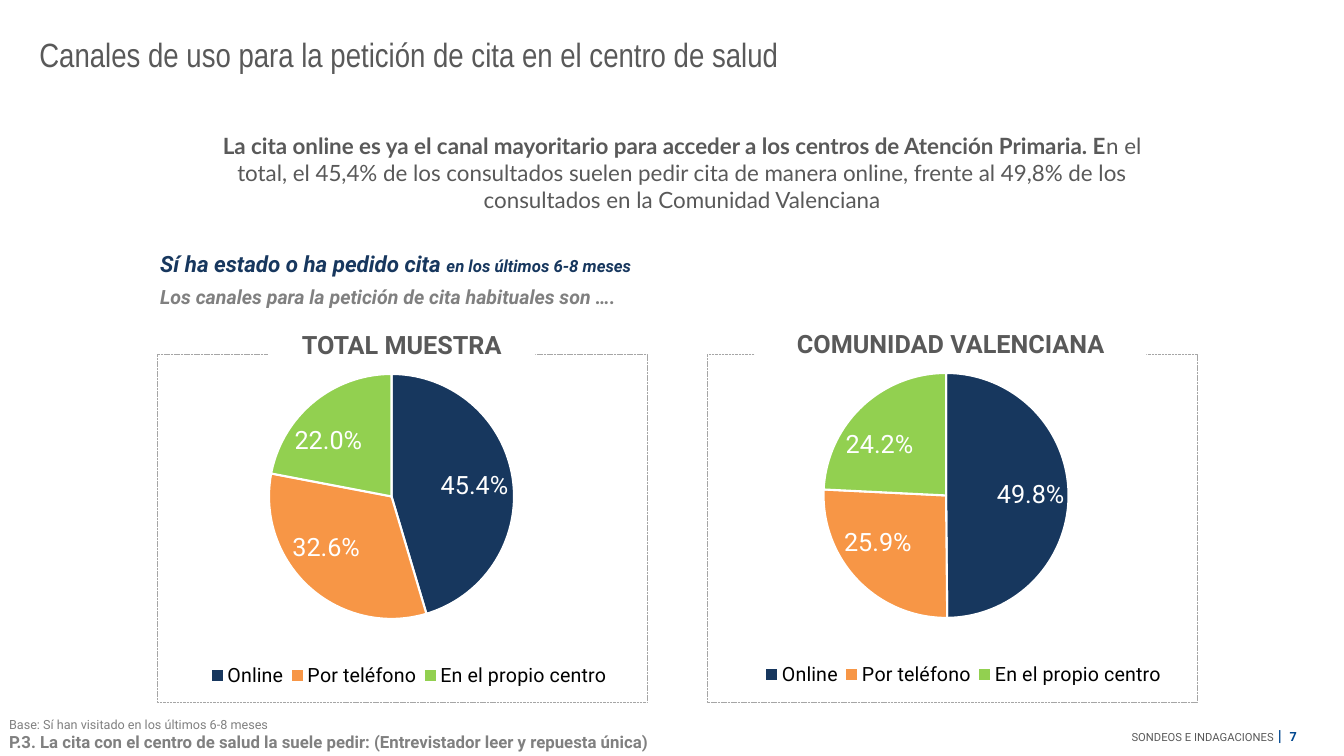
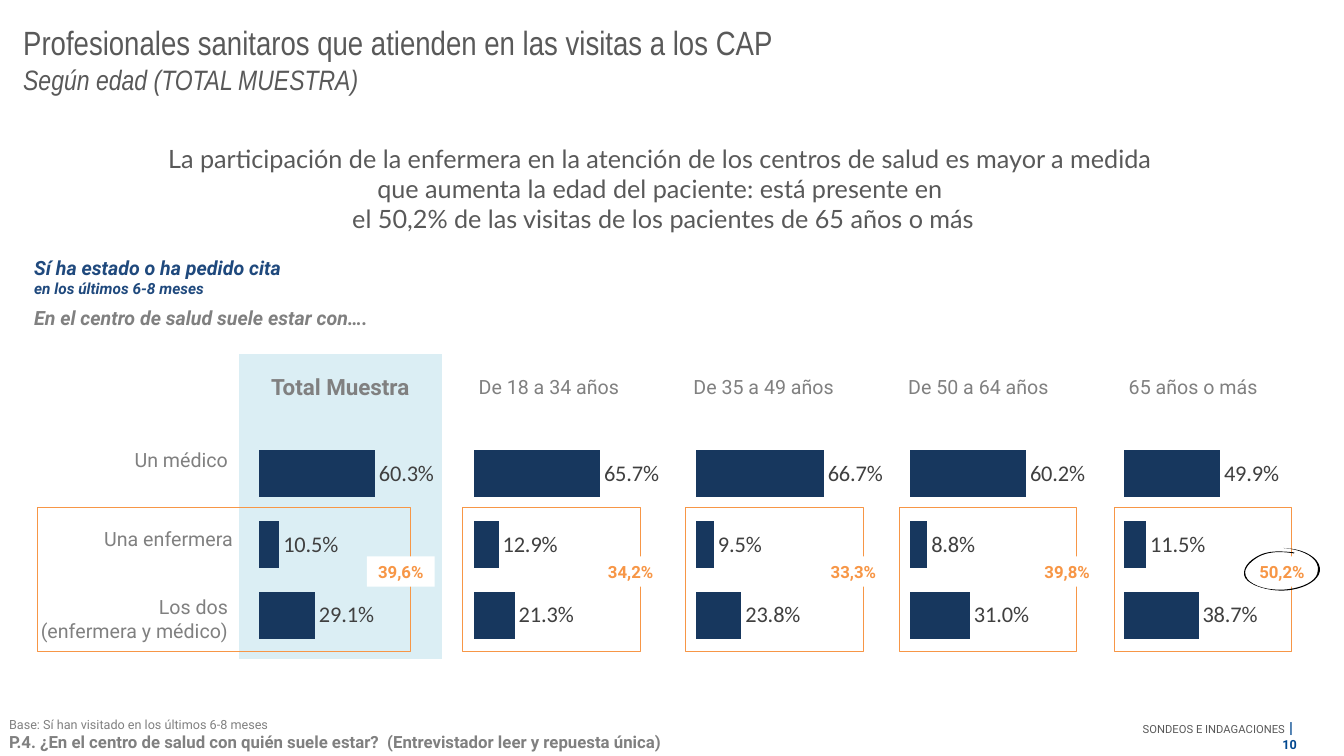
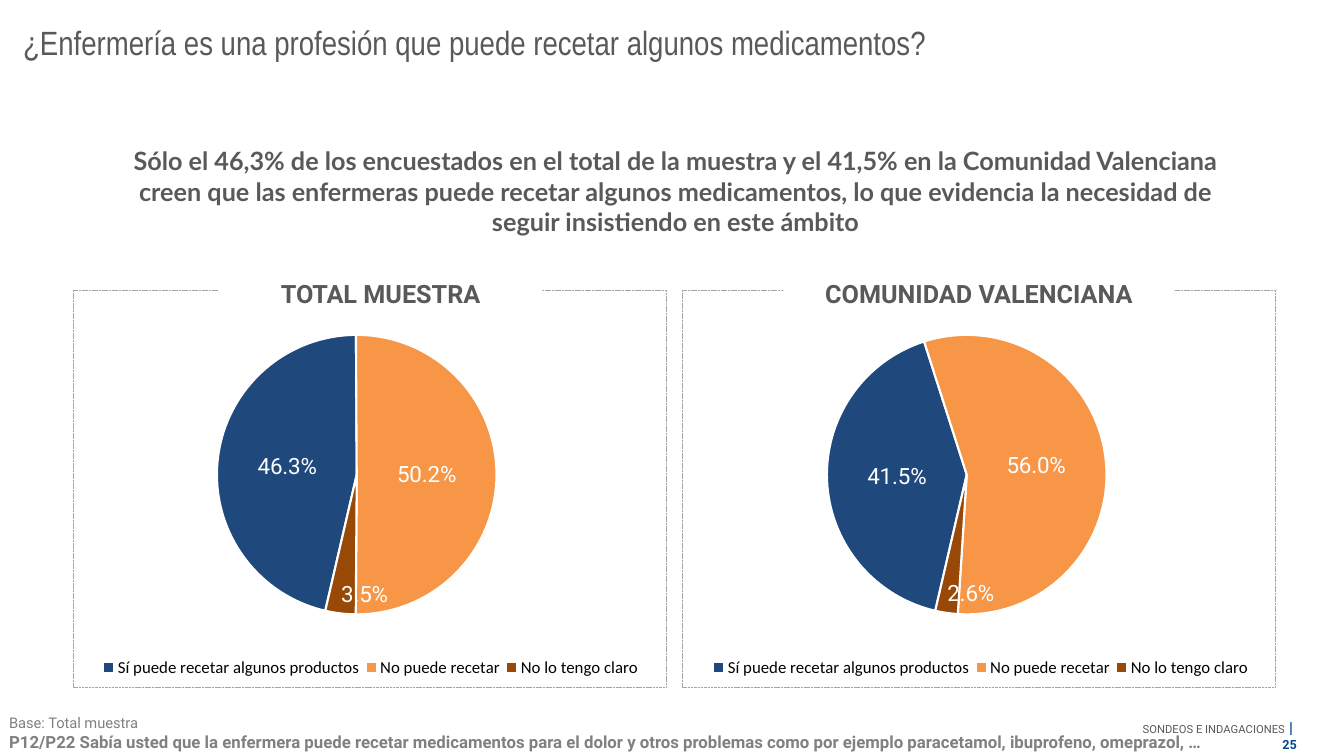
import pptx
import pptx.chart.data
import pptx.dml.color
import pptx.enum.chart
import pptx.enum.dml
import pptx.enum.shapes
import pptx.enum.text
import pptx.oxml
import pptx.oxml.ns
import pptx.util

SCALE = 9144  # EMU in one px, 100 px to the inch

RGBColor = pptx.dml.color.RGBColor
WHITE = RGBColor(0xFF, 0xFF, 0xFF)
BLACK = RGBColor(0x00, 0x00, 0x00)
TEXT_GRAY = RGBColor(0x59, 0x59, 0x59)
NOTE_GRAY = RGBColor(0x80, 0x80, 0x80)
LABEL_GRAY = RGBColor(0x40, 0x40, 0x40)
LINE_GRAY = RGBColor(0xA6, 0xA6, 0xA6)
NAVY = RGBColor(0x17, 0x37, 0x5E)
BLUE = RGBColor(0x1F, 0x49, 0x7D)
PAGE_BLUE = RGBColor(0x00, 0x47, 0x8F)
ORANGE = RGBColor(0xF7, 0x96, 0x46)
GREEN = RGBColor(0x92, 0xD0, 0x50)
BROWN = RGBColor(0x98, 0x48, 0x07)
PALE_BLUE = RGBColor(0xDB, 0xEE, 0xF4)

LEFT = pptx.enum.text.PP_ALIGN.LEFT
CENTER = pptx.enum.text.PP_ALIGN.CENTER
RIGHT = pptx.enum.text.PP_ALIGN.RIGHT
TOP = pptx.enum.text.MSO_ANCHOR.TOP
MIDDLE = pptx.enum.text.MSO_ANCHOR.MIDDLE
BOTTOM = pptx.enum.text.MSO_ANCHOR.BOTTOM
RECTANGLE = pptx.enum.shapes.MSO_SHAPE.RECTANGLE
PIE = pptx.enum.chart.XL_CHART_TYPE.PIE
BAR = pptx.enum.chart.XL_CHART_TYPE.BAR_CLUSTERED
LABEL_POSITION = pptx.enum.chart.XL_LABEL_POSITION


def write_text(shape, place, paragraphs, font="Roboto", align=LEFT, anchor=TOP,
               space_after=0, fill=None, wrap=True):
    """Place a shape and fill it; a run is (text, size, colour, style), style made of b and i."""
    shape.left, shape.top, shape.width, shape.height = (length * SCALE for length in place)
    if fill is not None:
        shape.fill.solid()
        shape.fill.fore_color.rgb = fill
    frame = shape.text_frame
    frame.auto_size = pptx.enum.text.MSO_AUTO_SIZE.NONE
    frame.word_wrap = wrap
    frame.vertical_anchor = anchor
    for index, runs in enumerate(paragraphs):
        paragraph = frame.add_paragraph() if index else frame.paragraphs[0]
        paragraph.alignment = align
        paragraph.space_after = pptx.util.Pt(space_after)
        for text, size, color, style in runs:
            for line_index, line in enumerate(text.split("\n")):
                if line_index:
                    paragraph.add_line_break()
                if line:
                    run = paragraph.add_run()
                    run.text = line
                    run.font.name = font
                    run.font.size = pptx.util.Pt(size)
                    run.font.color.rgb = color
                    run.font.bold = "b" in style
                    run.font.italic = "i" in style


def add_chart(slide, kind, place, categories, values, plot_box, legend_box=None):
    """Add a transparent one-series chart; the boxes are fractions x, y, width, height."""
    data = pptx.chart.data.CategoryChartData()
    data.categories = categories
    data.add_series("Series 1", values)
    chart = slide.shapes.add_chart(kind, *(length * SCALE for length in place), data).chart
    chart.has_title = False
    chart.has_legend = legend_box is not None
    chart.font.name = "Calibri"
    chart.font.size = pptx.util.Pt(10)
    chart.font.color.rgb = BLACK
    namespaces = pptx.oxml.ns.nsdecls("c", "a")
    chart_element = chart._chartSpace.chart
    chart_element.addnext(pptx.oxml.parse_xml(
        f"<c:spPr {namespaces}><a:noFill/><a:ln><a:noFill/></a:ln></c:spPr>"))
    layouts = [(chart_element.plotArea, plot_box, 0, '<c:layoutTarget val="inner"/>')]
    if legend_box:
        chart.legend.position = pptx.enum.chart.XL_LEGEND_POSITION.BOTTOM
        chart.legend.include_in_layout = False
        layouts.append((chart.legend._element, legend_box, 1, ""))
    for parent, box, index, target in layouts:
        for layout in parent.findall(pptx.oxml.ns.qn("c:layout")):
            parent.remove(layout)
        x, y, width, height = box
        parent.insert(index, pptx.oxml.parse_xml(
            f'<c:layout {namespaces}><c:manualLayout>{target}'
            f'<c:xMode val="edge"/><c:yMode val="edge"/><c:x val="{x}"/><c:y val="{y}"/>'
            f'<c:w val="{width}"/><c:h val="{height}"/></c:manualLayout></c:layout>'))
    labels = chart.plots[0].series[0].data_labels
    labels.show_value = True
    labels.show_percentage = False
    labels.show_category_name = False
    labels.number_format = r"0.0\%"
    labels.number_format_is_linked = False
    return chart


presentation = pptx.Presentation()
presentation.slide_width = 1333 * SCALE
presentation.slide_height = 750 * SCALE

# Titles, headlines, source notes and footers
VISIT_BASE = ("Base: Sí han visitado en los últimos 6-8 meses", 9)
pages = [
    dict(
        number="7",
        title=[("Canales de uso para la petición de cita en el centro de salud", 24, TEXT_GRAY, "")],
        title_place=(29, 29, 1064, 50),
        headline=[
            ("La cita online es ya el canal mayoritario para acceder a los centros de "
             "Atención Primaria. E", 16, TEXT_GRAY, "b"),
            ("n el total, el 45,4% de los consultados suelen pedir cita de manera online, "
             "frente al 49,8% de los consultados en la Comunidad Valenciana", 16, TEXT_GRAY, "")],
        headline_place=(202, 109, 949, 124),
        base=VISIT_BASE,
        question="P.3. La cita con el centro de salud la suele pedir: "
                 "(Entrevistador leer y repuesta única)",
    ),
    dict(
        number="10",
        title=[("Profesionales sanitaros que atienden en las visitas a los CAP\n", 24, TEXT_GRAY, ""),
               ("Según edad (TOTAL MUESTRA)", 20, TEXT_GRAY, "i")],
        title_place=(13, 17, 1142, 118),
        headline=[
            ("La participación de la enfermera en la atención de los centros de salud es mayor a "
             "medida que aumenta la edad del paciente: está presente en\n el 50,2% de las visitas "
             "de los pacientes de 65 años o más", 18, TEXT_GRAY, "")],
        headline_place=(154, 138, 1001, 98),
        base=VISIT_BASE,
        question="P.4. ¿En el centro de salud con quién suele estar?  "
                 "(Entrevistador leer y repuesta única)",
    ),
    dict(
        number="25",
        title=[("¿Enfermería es una profesión que puede recetar algunos medicamentos?",
                24, TEXT_GRAY, "")],
        title_place=(13, 17, 1142, 50),
        headline=[
            ("Sólo el 46,3% de los encuestados en el total de la muestra y el 41,5% en la Comunidad "
             "Valenciana creen que las enfermeras puede recetar algunos medicamentos, lo que "
             "evidencia la necesidad de seguir insistiendo en este ámbito", 18, TEXT_GRAY, "b")],
        headline_place=(102, 130, 1136, 119),
        base=("Base: Total muestra", 10.5),
        question="P12/P22 Sabía usted que la enfermera puede recetar medicamentos para el dolor y "
                 "otros problemas como por ejemplo paracetamol, ibuprofeno, omeprazol, …",
    ),
]
slides = []
for page in pages:
    slide = presentation.slides.add_slide(presentation.slide_layouts[5])
    slides.append(slide)
    write_text(slide.shapes.title, page["title_place"], [page["title"]], font="Arial Narrow")
    write_text(slide.shapes.add_textbox(0, 0, 0, 0), page["headline_place"], [page["headline"]],
               font="Lato", align=CENTER, anchor=MIDDLE, fill=WHITE)
    base_text, base_size = page["base"]
    source = slide.shapes.add_textbox(0, 0, 0, 0)
    write_text(source, (0, 704, 1289, 46),
               [[(base_text, base_size, NOTE_GRAY, "")], [(page["question"], 12, NOTE_GRAY, "b")]],
               anchor=BOTTOM)
    source.text_frame.margin_left = 9 * SCALE
    source.text_frame.margin_bottom = 4 * SCALE
    write_text(slide.shapes.add_textbox(0, 0, 0, 0), (1108, 715, 188, 29),
               [[("SONDEOS E INDAGACIONES", 8, TEXT_GRAY, ""), (" ", 11, TEXT_GRAY, ""),
                 ("|  ", 11, PAGE_BLUE, "b"), (page["number"], 9, PAGE_BLUE, "b")]],
               align=RIGHT, anchor=MIDDLE)

channels_slide, professionals_slide, prescribing_slide = slides

write_text(channels_slide.shapes.add_textbox(0, 0, 0, 0), (149, 243, 754, 69),
           [[("Sí ha estado o ha pedido cita ", 16, NAVY, "bi"),
             ("en los últimos 6-8 meses", 12, NAVY, "bi")],
            [("Los canales para la petición de cita habituales son ….", 14, NOTE_GRAY, "bi")]],
           space_after=6, fill=WHITE)
write_text(professionals_slide.shapes.add_textbox(0, 0, 0, 0), (24, 249, 705, 84),
           [[("Sí ha estado o ha pedido cita \n", 14, BLUE, "bi"),
             ("en los últimos 6-8 meses", 11, BLUE, "bi")],
            [("En el centro de salud suele estar con….", 14, NOTE_GRAY, "bi")]],
           space_after=6, fill=WHITE)

# Pie panels
channel_style = dict(
    categories=["Online", "Por teléfono", "En el propio centro"], colors=(NAVY, ORANGE, GREEN),
    plot_box=(0.2, 0.09, 0.56, 0.67), legend_box=(0.05, 0.83, 0.94, 0.08),
    legend_font=("Roboto", 14), label_size=18, label_position=LABEL_POSITION.BEST_FIT, start=0)
prescribing_style = dict(
    categories=["Sí puede recetar algunos productos", "No puede recetar", "No lo tengo claro"],
    colors=(BLUE, ORANGE, BROWN),
    plot_box=(0.23, 0.09, 0.49, 0.66), legend_box=(0.02, 0.84, 0.96, 0.06),
    legend_font=("Calibri", 12), label_size=16, label_position=LABEL_POSITION.CENTER, start=193)
pies = [
    (channels_slide, channel_style, "TOTAL MUESTRA", (45.4, 32.6, 22.0),
     (156, 351, 486, 346), (266, 315, 265, 53), (180, 323, 434, 399)),
    (channels_slide, channel_style, "COMUNIDAD VALENCIANA", (49.8, 25.9, 24.2),
     (701, 351, 486, 346), (749, 319, 388, 43), (730, 322, 434, 399)),
    (prescribing_slide, prescribing_style, "TOTAL MUESTRA", (46.3, 50.2, 3.5),
     (73, 288, 588, 394), (217, 265, 321, 53), (85, 292, 566, 426)),
    (prescribing_slide, prescribing_style, "COMUNIDAD VALENCIANA", (41.5, 56.0, 2.6),
     (677, 288, 588, 394), (777, 265, 388, 53), (690, 292, 566, 426)),
]
for slide, style, heading, values, panel_place, heading_place, chart_place in pies:
    panel = slide.shapes.add_shape(RECTANGLE, *(length * SCALE for length in panel_place))
    panel.shadow.inherit = False
    panel.fill.background()
    panel.line.color.rgb = LINE_GRAY
    panel.line.width = pptx.util.Pt(0.25)
    panel.line.dash_style = pptx.enum.dml.MSO_LINE.SQUARE_DOT
    write_text(slide.shapes.add_textbox(0, 0, 0, 0), heading_place,
               [[(heading, 18, TEXT_GRAY, "b")]], align=CENTER, anchor=MIDDLE, fill=WHITE)

    chart = add_chart(slide, PIE, chart_place, style["categories"], values,
                      style["plot_box"], style["legend_box"])
    plot = chart.plots[0]
    plot.vary_by_categories = True
    for old_angle in plot._element.findall(pptx.oxml.ns.qn("c:firstSliceAng")):
        plot._element.remove(old_angle)
    plot._element.append(pptx.oxml.parse_xml(
        f'<c:firstSliceAng {pptx.oxml.ns.nsdecls("c")} val="{style["start"]}"/>'))
    legend_font_name, legend_font_size = style["legend_font"]
    chart.legend.font.name = legend_font_name
    chart.legend.font.size = pptx.util.Pt(legend_font_size)
    chart.legend.font.color.rgb = BLACK
    series = plot.series[0]
    for index, color in enumerate(style["colors"]):
        point_format = series.points[index].format
        point_format.fill.solid()
        point_format.fill.fore_color.rgb = color
        point_format.line.color.rgb = WHITE
        point_format.line.width = pptx.util.Pt(1.5)
    series.data_labels.position = style["label_position"]
    label_fonts = [series.data_labels.font]
    if min(values) < 5:
        small_label = series.points[values.index(min(values))].data_label
        small_label.position = LABEL_POSITION.INSIDE_END
        label_fonts.append(small_label.font)
    for font in label_fonts:
        font.name = "Roboto"
        font.size = pptx.util.Pt(style["label_size"])
        font.color.rgb = WHITE

# Professionals by age: header, values, nurse total, chart left, box left, box right
age_columns = [
    ("Total Muestra", (60.3, 10.5, 29.1), "39,6%", 257, 37, 407),
    ("De 18 a 34 años", (65.7, 12.9, 21.3), "34,2%", 470, 459, 635),
    ("De 35 a 49 años", (66.7, 9.5, 23.8), "33,3%", 690, 680, 856),
    ("De 50 a 64 años", (60.2, 8.8, 31.0), "39,8%", 903, 892, 1068),
    ("65 años o más", (49.9, 11.5, 38.7), "50,2%", 1115, 1105, 1281),
]
row_labels = ["Un médico ", "Una enfermera", "Los dos \n(enfermera y médico) "]
column_widths = [224, 201, 213, 213, 213, 213]
row_heights = [66, 79, 79, 79]
table = professionals_slide.shapes.add_table(
    len(row_heights), len(column_widths), 13 * SCALE, 351 * SCALE,
    sum(column_widths) * SCALE, sum(row_heights) * SCALE).table
table.first_row = False
table.horz_banding = False
for column, width in zip(table.columns, column_widths):
    column.width = width * SCALE
for row, height in zip(table.rows, row_heights):
    row.height = height * SCALE
table_style = table._tbl.tblPr.find(pptx.oxml.ns.qn("a:tableStyleId"))
table_style.text = "{2D5ABB26-0587-4C30-8999-92F81FD0307C}"
headers = [column[0] for column in age_columns]
for row_index in range(len(row_heights)):
    for column_index in range(len(column_widths)):
        cell = table.cell(row_index, column_index)
        is_total = column_index == 1
        if is_total:
            cell.fill.solid()
            cell.fill.fore_color.rgb = PALE_BLUE
        else:
            cell.fill.background()
        if (row_index == 0) == (column_index == 0):
            continue
        text = row_labels[row_index - 1] if row_index else headers[column_index - 1]
        cell.vertical_anchor = MIDDLE
        cell.margin_left = cell.margin_top = SCALE
        cell.margin_right = (6 if row_index else 1) * SCALE
        cell.margin_bottom = 0
        paragraph = cell.text_frame.paragraphs[0]
        paragraph.alignment = RIGHT if row_index else CENTER
        for line_index, line in enumerate(text.split("\n")):
            if line_index:
                paragraph.add_line_break()
            run = paragraph.add_run()
            run.text = line
            run.font.name = "Roboto"
            run.font.size = pptx.util.Pt(16 if is_total else 14)
            run.font.bold = is_total
            run.font.color.rgb = NOTE_GRAY

for header, values, nurse_total, chart_left, box_left, box_right in age_columns:
    chart = add_chart(professionals_slide, BAR, (chart_left, 435, 323, 211),
                      ["1", "2", "3"], values, (0, 0, 0.59, 1))
    chart.category_axis.visible = False
    chart.category_axis.reverse_order = True
    chart.value_axis.visible = False
    chart.value_axis.has_major_gridlines = False
    chart.value_axis.minimum_scale = 0
    chart.value_axis.maximum_scale = 100
    plot = chart.plots[0]
    plot.vary_by_categories = False
    plot.gap_width = 50
    series = plot.series[0]
    series.format.fill.solid()
    series.format.fill.fore_color.rgb = NAVY
    series.data_labels.position = LABEL_POSITION.OUTSIDE_END
    series.data_labels.font.name = "Calibri"
    series.data_labels.font.size = pptx.util.Pt(16)
    series.data_labels.font.color.rgb = LABEL_GRAY

    nurse_box = professionals_slide.shapes.add_shape(
        RECTANGLE, box_left * SCALE, 503 * SCALE, (box_right - box_left) * SCALE, 143 * SCALE)
    nurse_box.shadow.inherit = False
    nurse_box.fill.background()
    nurse_box.line.color.rgb = ORANGE
    nurse_box.line.width = pptx.util.Pt(0.5)
    write_text(professionals_slide.shapes.add_textbox(0, 0, 0, 0), (box_right - 43, 552, 67, 30),
               [[(nurse_total, 12, ORANGE, "b")]], align=CENTER, fill=WHITE, wrap=False)

# Hand-drawn ring: each curve is two control points and an end point
ring_start = (1283, 548)
ring_curves = [
    ((1272, 547), (1261, 546), (1251, 550)), ((1242, 554), (1235, 560), (1234, 567)),
    ((1231, 579), (1255, 586), (1271, 586)), ((1289, 586), (1307, 578), (1309, 567)),
    ((1311, 554), (1293, 544), (1274, 544)), ((1273, 543), (1273, 544), (1274, 544)),
    ((1292, 545), (1309, 554), (1307, 566)), ((1307, 577), (1290, 584), (1273, 585)),
    ((1256, 586), (1235, 580), (1235, 568)), ((1235, 562), (1242, 556), (1249, 552)),
    ((1259, 547), (1271, 547), (1283, 549)), ((1284, 549), (1284, 548), (1283, 548)),
]
STEPS = 10
ring_points = []
curve_start = ring_start
for first, second, end in ring_curves:
    for step in range(1, STEPS + 1):
        t = step / STEPS
        ring_points.append(tuple(
            SCALE * ((1 - t) ** 3 * a + 3 * (1 - t) ** 2 * t * b + 3 * (1 - t) * t ** 2 * c + t ** 3 * d)
            for a, b, c, d in zip(curve_start, first, second, end)))
    curve_start = end
builder = professionals_slide.shapes.build_freeform(*(length * SCALE for length in ring_start))
builder.add_line_segments(ring_points, close=True)
ring = builder.convert_to_shape()
ring.shadow.inherit = False
ring.fill.solid()
ring.fill.fore_color.rgb = BLACK
ring.line.fill.background()

presentation.save("out.pptx")
